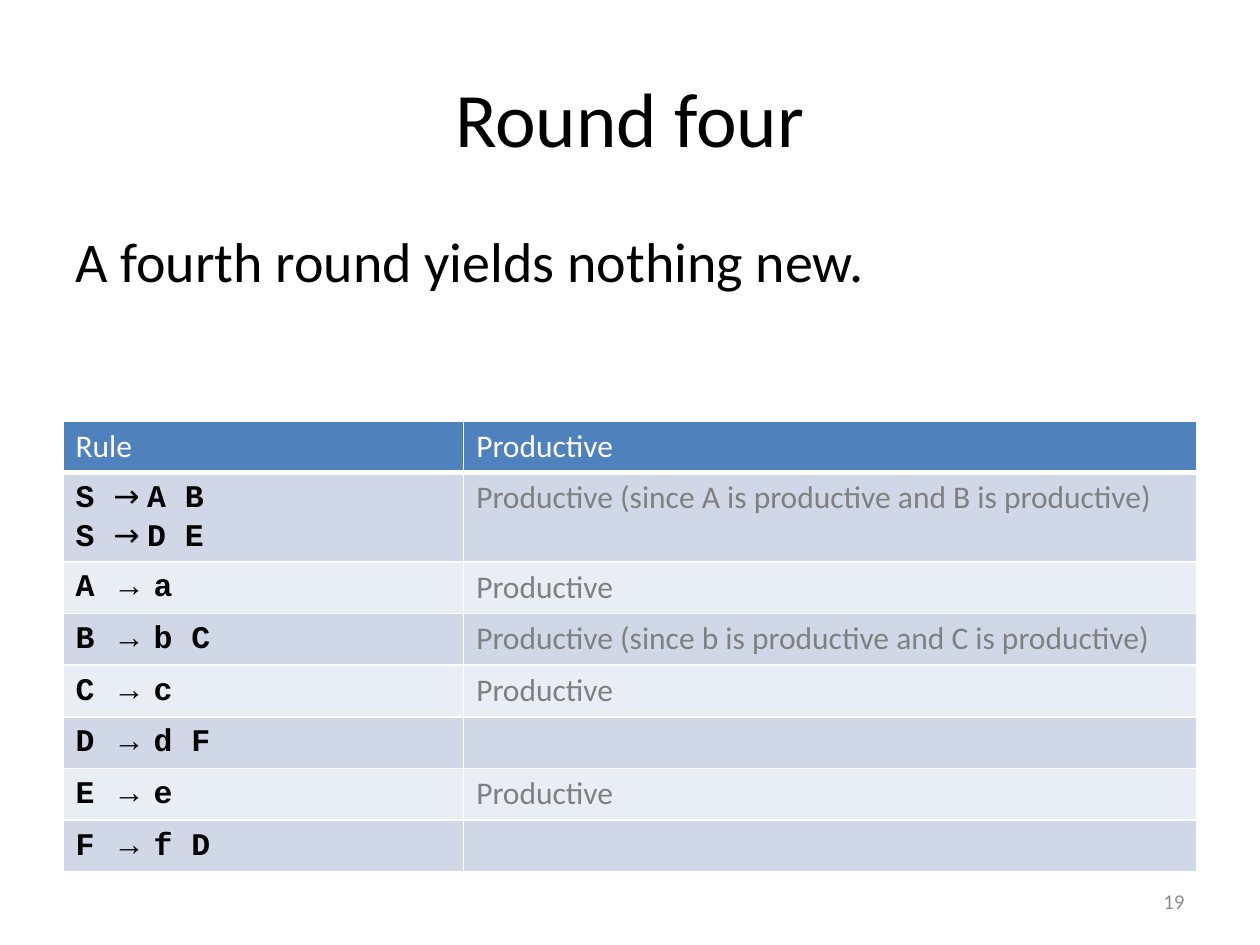
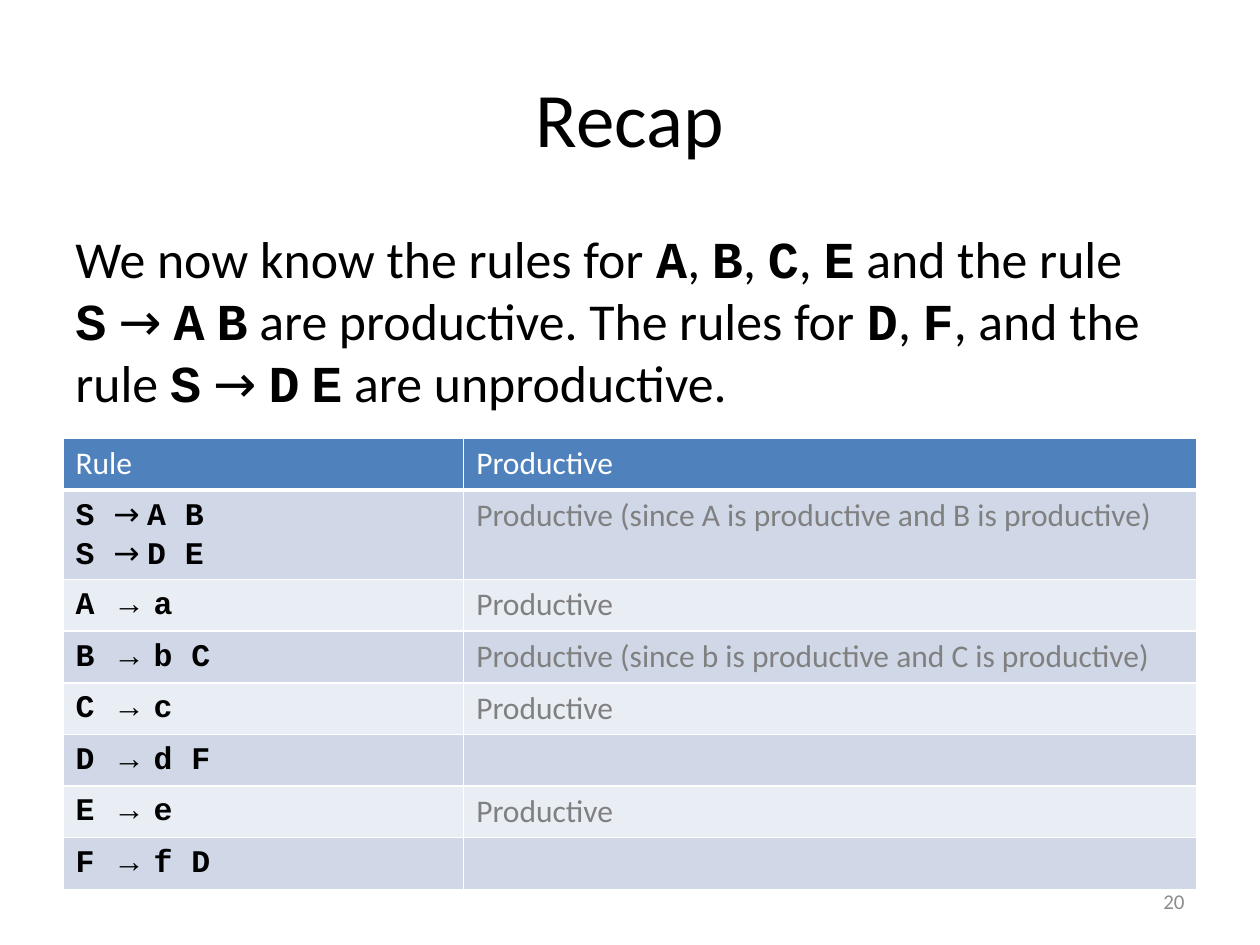
from lxml import etree
from pptx import Presentation
from pptx import util as u
from pptx.dml.color import RGBColor
from pptx.enum import text as tx
from pptx.oxml import ns

BLACK = RGBColor(0x00, 0x00, 0x00)
WHITE = RGBColor(0xFF, 0xFF, 0xFF)
BLUE = RGBColor(0x4F, 0x81, 0xBD)
BANDS = (RGBColor(0xD0, 0xD8, 0xE8), RGBColor(0xE9, 0xED, 0xF4))
GREY = RGBColor(0x80, 0x80, 0x80)
PALE = RGBColor(0x8C, 0x8C, 0x8C)
SANS, MONO, PLAIN, SLIM = "Calibri", "Courier New", "Arial", "Roboto Condensed"

WIDTH, HEIGHT = u.Inches(10), u.Inches(7.5)
EDGE = 0.05
SPAN = 1 - 2 * EDGE
COLS = (3.18, 5.82)
ROW, TALL = 0.41, 0.71

HEADS = ("Rule", "Productive")
RULES = (
    (("S → A B", "S → D E"), "Productive (since A is productive and B is productive)"),
    (("A → a",), "Productive"),
    (("B → b C",), "Productive (since b is productive and C is productive)"),
    (("C → c",), "Productive"),
    (("D → d F",), ""),
    (("E → e",), "Productive"),
    (("F → f D",), ""),
)
ROUND = "A fourth round yields nothing new."
RECAP = (
    "We now know the rules for *A*, *B*, *C*, *E* and the rule \n"
    "*S* → *A* *B* are productive. The rules for *D*, *F*, and the "
    "rule *S* → *D* *E* are unproductive."
)


def style(run, size, color=BLACK, face=SANS):
    font = run.font
    font.name, font.size, font.bold = face, u.Pt(size), face == MONO
    font.color.rgb = color


def add_run(para, words, size, face):
    run = para.add_run()
    run.text = words
    style(run, size, face=face)


def add_box(slide, left, top, wide, high, anchor=tx.MSO_ANCHOR.MIDDLE):
    box = slide.shapes.add_textbox(
        int(left * WIDTH), int(top * HEIGHT), int(wide * WIDTH), int(high * HEIGHT)
    )
    frame = box.text_frame
    frame.word_wrap = True
    frame.vertical_anchor = anchor
    return frame.paragraphs[0]


def add_line(slide, area, words, size, color, align):
    para = add_box(slide, *area)
    para.text = words
    para.alignment = align
    style(para.runs[0], size, color)


def add_body(slide, words, size):
    para = add_box(slide, EDGE, 0.233, SPAN, 0.263, tx.MSO_ANCHOR.TOP)
    for row, line in enumerate(words.split("\n")):
        if row:
            para.add_line_break()
        for spot, part in enumerate(line.split("*")):
            if part:
                face = MONO if spot % 2 else SLIM if "→" in part else SANS
                add_run(para, part, size, face)


def add_rules(frame, rules):
    face = SLIM if len(rules) > 1 else PLAIN
    for spot, rule in enumerate(rules):
        para = frame.add_paragraph() if spot else frame.paragraphs[0]
        left, right = rule.split("→ ")
        add_run(para, left, 18, MONO)
        add_run(para, "→ ", 18, face)
        add_run(para, right, 18, MONO)


def paint(cell, color, base=1):
    props = cell._tc.get_or_add_tcPr()
    for side in "LRTB":
        line = etree.SubElement(props, ns.qn("a:ln" + side))
        line.set("w", str(u.Pt(base if side == "B" else 1)))
        fill = etree.SubElement(line, ns.qn("a:solidFill"))
        etree.SubElement(fill, ns.qn("a:srgbClr")).set("val", str(WHITE))
    cell.fill.solid()
    cell.fill.fore_color.rgb = color


def fill_text(cell, words, color):
    cell.text_frame.text = words
    for run in cell.text_frame.paragraphs[0].runs:
        style(run, 18, color)


def add_grid(slide, top):
    highs = [ROW] + [TALL if len(rules) > 1 else ROW for rules, _ in RULES]
    shape = slide.shapes.add_table(
        len(highs), len(COLS), int(EDGE * WIDTH), u.Inches(top),
        int(SPAN * WIDTH), u.Inches(sum(highs)),
    )
    grid = shape.table
    for col, wide in zip(grid.columns, COLS):
        col.width = u.Inches(wide)
    for row, high in zip(grid.rows, highs):
        row.height = u.Inches(high)
    for col, head in enumerate(HEADS):
        cell = grid.cell(0, col)
        fill_text(cell, head, WHITE)
        paint(cell, BLUE, 3)
    for row, (rules, note) in enumerate(RULES, 1):
        add_rules(grid.cell(row, 0).text_frame, rules)
        fill_text(grid.cell(row, 1), note, GREY)
        for cell in grid.rows[row].cells:
            paint(cell, BANDS[(row - 1) % 2])


def add_slide(deck, title, body, size, top, page):
    slide = deck.slides.add_slide(deck.slide_layouts[6])
    add_line(slide, (EDGE, 0.04, SPAN, 0.167), title, 44, BLACK, tx.PP_ALIGN.CENTER)
    add_grid(slide, top)
    add_line(slide, (0.717, 0.927, 0.233, 0.053), str(page), 12, PALE, tx.PP_ALIGN.RIGHT)
    add_body(slide, body, size)


def main():
    deck = Presentation()
    deck.slide_width, deck.slide_height = WIDTH, HEIGHT
    add_slide(deck, "Round four", ROUND, 32, 3.34, 19)
    add_slide(deck, "Recap", RECAP, 29.6, 3.48, 20)
    deck.save("out.pptx")


if __name__ == "__main__":
    main()
